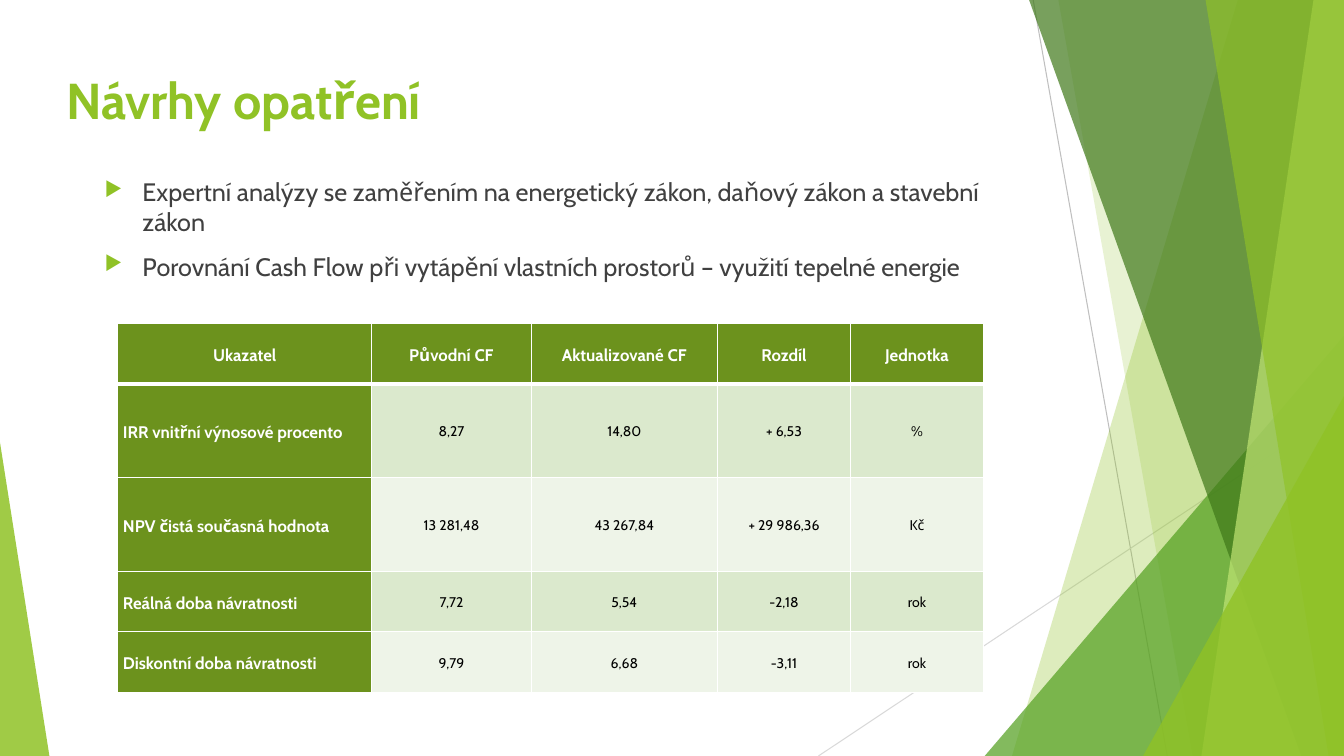
from dataclasses import dataclass

from lxml.etree import SubElement
from pptx import Presentation
from pptx.dml.color import RGBColor
from pptx.enum.shapes import MSO_CONNECTOR as Connector, MSO_SHAPE as Shape
from pptx.enum.text import MSO_ANCHOR as Anchor, PP_ALIGN as Align
from pptx.oxml.ns import qn
from pptx.util import Pt


@dataclass(frozen=True)
class Theme:
    font: str = "Cabin"
    accent: str = "90C226"
    leaf: str = "54A021"
    forest: str = "3F7819"
    lime: str = "C0E474"
    ink: str = "404040"
    black: str = "000000"
    white: str = "FFFFFF"
    line_dark: str = "BFBFBF"
    line_light: str = "D9D9D9"
    header: str = "6C921D"
    bands: tuple = ("DBE9CD", "EEF4E8")
    title_size: int = 36
    body_size: int = 18
    label_size: int = 12
    value_size: int = 10


@dataclass(frozen=True)
class Box:
    left: float
    top: float
    width: float
    height: float

    def lengths(self):
        return Pt(self.left), Pt(self.top), Pt(self.width), Pt(self.height)


THEME = Theme()
SLIDE = Box(0, 0, 960, 540)
TITLE = Box(40.3, 46.1, 676.8, 103.7)
BODY = Box(67.7, 122.4, 676.8, 77.8)
TABLE = Box(84.2, 230.9, 618.5, 263.5)

LINES = [
    (738, 0, 833.8, 540, THEME.line_dark),
    (960, 290.2, 584.6, 540, THEME.line_light),
]
FACETS = [
    ("blade", 884.2, 722.9, THEME.accent, 30),
    ("blade", 756, 851.8, THEME.accent, 20),
    ("triangle", Box(703.4, 239.8, 256.6, 300.2), 1, THEME.leaf, 72),
    ("blade", 735.1, 929.5, THEME.forest, 70),
    ("blade", 938.2, 858.2, THEME.lime, 70),
    ("blade", 861.1, 949, THEME.accent, 65),
    ("triangle", Box(816.5, 283, 143.5, 257), 1, THEME.accent, 80),
    ("triangle", Box(0, 316.1, 35.3, 223.9), 0, THEME.accent, 85),
]
POINTS = [
    "Expertní analýzy se zaměřením na energetický zákon, daňový zákon a stavební zákon",
    "Porovnání Cash Flow při vytápění vlastních prostorů – využití tepelné energie",
]
ROWS = [
    ["Ukazatel", "Původní CF", "Aktualizované CF", "Rozdíl", "Jednotka"],
    ["IRR vnitřní výnosové procento", "8,27", "14,80", "+ 6,53", "%"],
    ["NPV čistá současná hodnota", "13 281,48", "43 267,84", "+ 29 986,36", "Kč"],
    ["Reálná doba návratnosti", "7,72", "5,54", "-2,18", "rok"],
    ["Diskontní doba návratnosti", "9,79", "6,68", "-3,11", "rok"],
]
COLUMN_WIDTHS = [181.4, 113.8, 133.2, 95, 95]
ROW_HEIGHTS = [43.2, 67, 67, 43.2, 43.2]


def write_text(para, text, size, color, bold=False, align=Align.LEFT, spacing=None):
    para.alignment = align
    if spacing:
        para.line_spacing = spacing
    span = para.add_run()
    span.text = text
    span.font.name = THEME.font
    span.font.size = Pt(size)
    span.font.bold = bold
    span.font.color.rgb = RGBColor.from_string(color)


def add_bullet(para, indent):
    props = para._p.get_or_add_pPr()
    props.set("marL", str(Pt(indent)))
    props.set("indent", str(-Pt(indent)))
    SubElement(SubElement(props, qn("a:buClr")), qn("a:srgbClr"), val=THEME.accent)
    SubElement(props, qn("a:buSzPct"), val="80000")
    SubElement(props, qn("a:buChar"), char="▶")


def paint(shape, color, opacity):
    shape.shadow.inherit = False
    shape.fill.solid()
    shape.fill.fore_color.rgb = RGBColor.from_string(color)
    shape.line.fill.background()
    tint = shape._element.spPr.find(".//" + qn("a:srgbClr"))
    SubElement(tint, qn("a:alpha"), val=str(opacity * 1000))


def draw_blade(page, box, top_x, bottom_x):
    right, bottom = box.left + box.width, box.top + box.height
    builder = page.shapes.build_freeform(Pt(box.left + top_x), Pt(box.top))
    corners = [(right, box.top), (right, bottom), (box.left + bottom_x, bottom)]
    builder.add_line_segments([(Pt(x), Pt(y)) for x, y in corners], close=True)
    return builder.convert_to_shape()


def draw_triangle(page, box, area, apex):
    placed = Box(box.left + area.left, box.top + area.top, area.width, area.height)
    shape = page.shapes.add_shape(Shape.ISOSCELES_TRIANGLE, *placed.lengths())
    shape.adjustments[0] = apex
    return shape


def draw_backdrop(page, box):
    for x1, y1, x2, y2, color in LINES:
        line = page.shapes.add_connector(
            Connector.STRAIGHT,
            Pt(box.left + x1), Pt(box.top + y1), Pt(box.left + x2), Pt(box.top + y2),
        )
        line.line.color.rgb = RGBColor.from_string(color)
        line.line.width = Pt(0.75)
        SubElement(line._element.spPr, qn("a:effectLst"))
    draw = {"blade": draw_blade, "triangle": draw_triangle}
    for kind, first, second, color, opacity in FACETS:
        paint(draw[kind](page, box, first, second), color, opacity)


def add_frame(page, box):
    frame = page.shapes.add_textbox(*box.lengths()).text_frame
    frame.word_wrap = True
    return frame


def draw_title(page, box):
    para = add_frame(page, box).paragraphs[0]
    write_text(para, "Návrhy opatření", size=THEME.title_size, color=THEME.accent, bold=True)


def draw_body(page, box):
    frame = add_frame(page, box)
    for index, text in enumerate(POINTS):
        para = frame.add_paragraph() if index else frame.paragraphs[0]
        para.space_before = Pt(10 if index else 0)
        add_bullet(para, indent=27)
        write_text(para, text, size=THEME.body_size, color=THEME.ink)


def set_borders(cell, **widths):
    props = cell._tc.get_or_add_tcPr()
    for side in "LRTB":
        border = SubElement(props, qn("a:ln" + side), w=str(Pt(widths.get(side, 1))))
        SubElement(SubElement(border, qn("a:solidFill")), qn("a:srgbClr"), val=THEME.white)


def fill_cell(cell, text, row, column):
    is_label = row == 0 or column == 0
    cell.vertical_anchor = Anchor.MIDDLE
    cell.margin_left = cell.margin_right = Pt(3.6)
    cell.margin_top = cell.margin_bottom = 0
    set_borders(cell, T=3 if row == 1 else 1, B=3 if row == 0 else 1)
    cell.fill.solid()
    color = THEME.header if is_label else THEME.bands[(row - 1) % 2]
    cell.fill.fore_color.rgb = RGBColor.from_string(color)
    write_text(
        cell.text_frame.paragraphs[0], text,
        size=THEME.label_size if is_label else THEME.value_size,
        color=THEME.white if is_label else THEME.black,
        bold=is_label,
        align=Align.LEFT if row and column == 0 else Align.CENTER,
        spacing=1.15,
    )


def draw_table(page, box):
    table = page.shapes.add_table(len(ROWS), len(ROWS[0]), *box.lengths()).table
    for column, width in zip(table.columns, COLUMN_WIDTHS):
        column.width = Pt(width)
    for row, height in zip(table.rows, ROW_HEIGHTS):
        row.height = Pt(height)
    for row, texts in enumerate(ROWS):
        for column, text in enumerate(texts):
            fill_cell(table.cell(row, column), text, row, column)


def main():
    deck = Presentation()
    deck.slide_width, deck.slide_height = Pt(SLIDE.width), Pt(SLIDE.height)
    page = deck.slides.add_slide(deck.slide_layouts[6])
    draw_backdrop(page, SLIDE)
    draw_title(page, TITLE)
    draw_body(page, BODY)
    draw_table(page, TABLE)
    deck.save("out.pptx")


if __name__ == "__main__":
    main()
